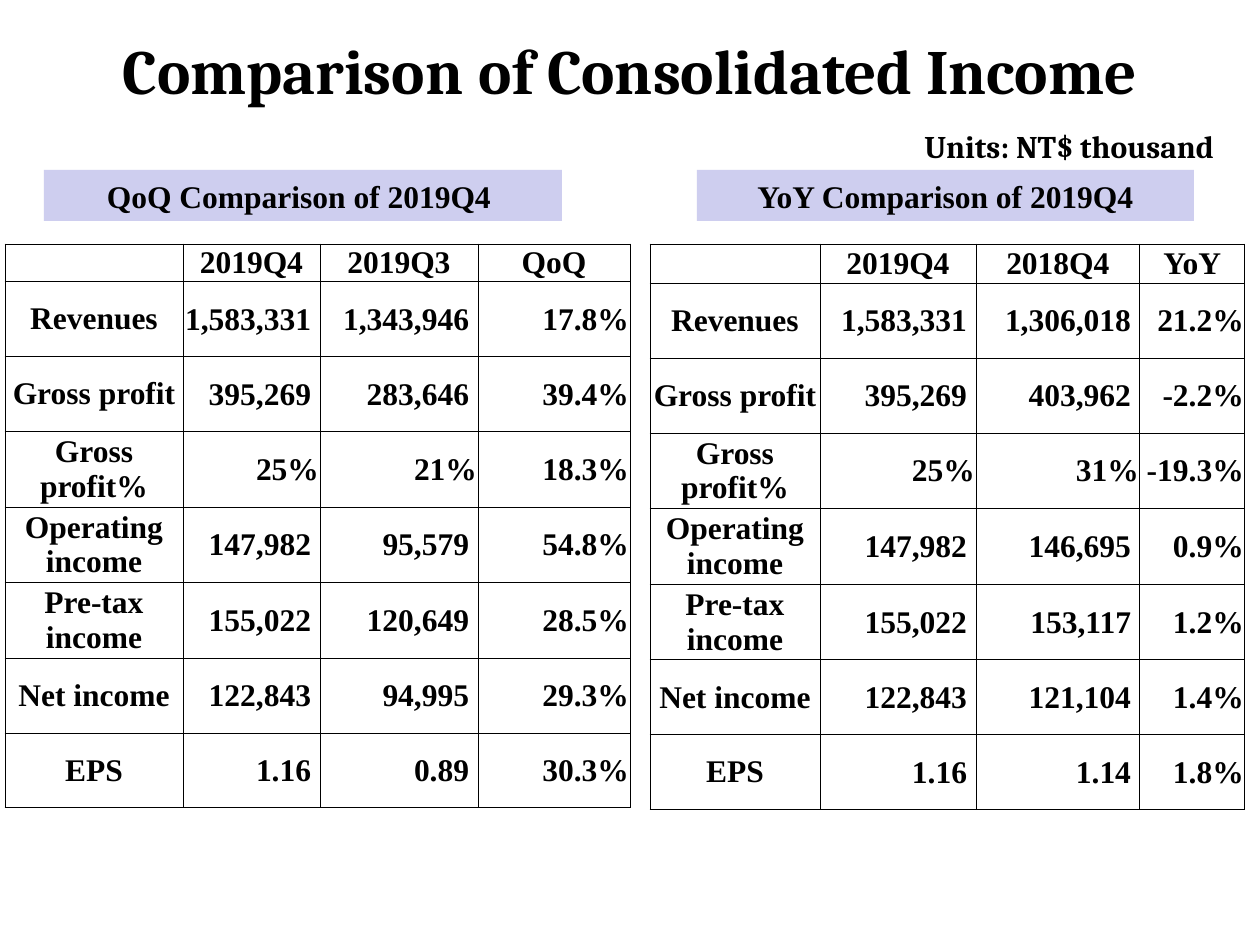
import pptx
import pptx.util
import pptx.dml.color
import pptx.enum.shapes
import pptx.enum.text
import pptx.oxml.ns
from lxml import etree

PX = 914400 // 126
COLORS = {"text": "000000", "border": "000000", "band": "CECEEF"}
SERIF, HEADING = "Times New Roman", "Cambria"
ALIGN = pptx.enum.text.PP_ALIGN
MIDDLE = pptx.enum.text.MSO_ANCHOR.MIDDLE


def rgb(name):
    return pptx.dml.color.RGBColor.from_string(COLORS[name])


class Deck:
    """Holds the style and the current slide."""

    def __init__(self):
        self.prs = pptx.Presentation()
        self.prs.slide_width = 1260 * PX
        self.prs.slide_height = 945 * PX
        self.slide = self.prs.slides.add_slide(self.prs.slide_layouts[6])

    def style(self, font, face=SERIF, size=18, bold=True):
        font.name, font.size, font.bold = face, pptx.util.Pt(size), bold
        font.color.rgb = rgb("text")

    def box(self, x, y, w, h):
        frame = self.slide.shapes.add_textbox(x * PX, y * PX, w * PX, h * PX).text_frame
        frame.word_wrap = True
        return frame

    def title(self, x, y, w, h, runs):
        frame = self.box(x, y, w, h)
        frame.vertical_anchor = MIDDLE
        paragraph = frame.paragraphs[0]
        paragraph.alignment = ALIGN.CENTER
        for text, face, size, bold in runs:
            run = paragraph.add_run()
            run.text = text
            self.style(run.font, face, size, bold)

    def note(self, x, y, w, h, text):
        paragraph = self.box(x, y, w, h).paragraphs[0]
        paragraph.text = text
        self.style(paragraph.font, HEADING)

    def band(self, x, y, w, h, text):
        band = self.slide.shapes.add_shape(
            pptx.enum.shapes.MSO_SHAPE.RECTANGLE, x * PX, y * PX, w * PX, h * PX)
        band.shadow.inherit = False
        band.fill.solid()
        band.fill.fore_color.rgb = rgb("band")
        band.line.fill.background()
        paragraph = band.text_frame.paragraphs[0]
        paragraph.text = text
        paragraph.alignment = ALIGN.CENTER
        self.style(paragraph.font)

    def borders(self, cell):
        properties = cell._tc.get_or_add_tcPr()
        for position, side in enumerate(("lnL", "lnR", "lnT", "lnB")):
            line = etree.Element(pptx.oxml.ns.qn(f"a:{side}"), w="6350")
            fill = etree.SubElement(line, pptx.oxml.ns.qn("a:solidFill"))
            etree.SubElement(fill, pptx.oxml.ns.qn("a:srgbClr"), val=COLORS["border"])
            properties.insert(position, line)

    def cell(self, cell, text, is_value):
        inset = PX if is_value else 0
        cell.margin_left = cell.margin_right = cell.margin_top = inset
        cell.margin_bottom = 0
        cell.vertical_anchor = MIDDLE
        cell.fill.background()
        self.borders(cell)
        paragraph = cell.text_frame.paragraphs[0]
        if text:
            paragraph.text = text
            paragraph.alignment = ALIGN.RIGHT if is_value else ALIGN.CENTER
            self.style(paragraph.font)
        else:
            # A small end mark keeps the empty corner from raising its row
            etree.SubElement(paragraph._p, pptx.oxml.ns.qn("a:endParaRPr"), sz="1200")

    def table(self, x, y, widths, height, header_height, rows):
        table = self.slide.shapes.add_table(
            len(rows), len(widths), x * PX, y * PX, sum(widths) * PX, height * PX).table
        table.first_row = table.horz_banding = False
        for column, width in zip(table.columns, widths):
            column.width = width * PX
        body_height = (height - header_height) * PX // (len(rows) - 1)
        for r, values in enumerate(rows):
            table.rows[r].height = body_height if r else header_height * PX
            for c, text in enumerate(values):
                self.cell(table.cell(r, c), text, r > 0 and c > 0)


ITEMS = ["", "Revenues", "Gross profit", "Gross profit%", "Operating income",
         "Pre-tax income", "Net income", "EPS"]
CURRENT = ["2019Q4", "1,583,331 ", "395,269 ", "25%", "147,982 ", "155,022 ",
           "122,843 ", "1.16 "]
PRIOR_QUARTER = ["2019Q3", "1,343,946 ", "283,646 ", "21%", "95,579 ", "120,649 ",
                 "94,995 ", "0.89 "]
QOQ = ["QoQ", "17.8%", "39.4%", "18.3%", "54.8%", "28.5%", "29.3%", "30.3%"]
PRIOR_YEAR = ["2018Q4", "1,306,018 ", "403,962 ", "31%", "146,695 ", "153,117 ",
              "121,104 ", "1.14 "]
YOY = ["YoY", "21.2%", "-2.2%", "-19.3%", "0.9%", "1.2%", "1.4%", "1.8%"]


def main():
    deck = Deck()

    # Title
    deck.title(63, 22, 1134, 94, [
        ("Comparison", HEADING, 36, True),
        (" ", "Arial", 32, False),
        ("of Consolidated Income", HEADING, 36, True)])

    # Quarter-on-quarter comparison
    deck.table(5, 244, [178, 137, 158, 152], 558, 35,
               list(zip(ITEMS, CURRENT, PRIOR_QUARTER, QOQ)))
    deck.band(44, 170, 518, 51, "QoQ Comparison of 2019Q4 ")

    # Year-on-year comparison
    deck.table(650, 244, [170, 156, 164, 105], 564, 39,
               list(zip(ITEMS, CURRENT, PRIOR_YEAR, YOY)))
    deck.band(697, 170, 497, 51, "YoY Comparison of 2019Q4")

    # Units
    deck.note(912, 121, 348, 51, "Units: NT$ thousand")

    deck.prs.save("out.pptx")


if __name__ == "__main__":
    main()
